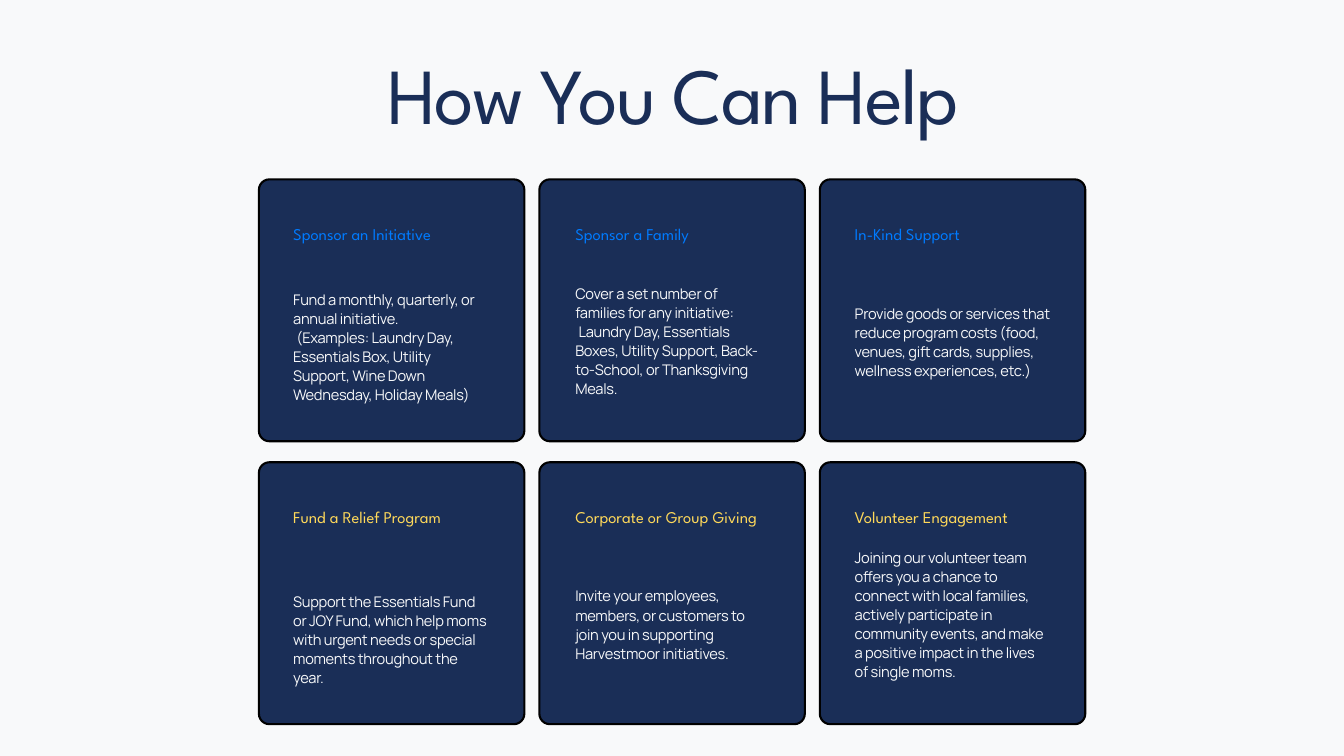
import pptx
import pptx.util
import pptx.dml.color
import pptx.enum.shapes
import pptx.enum.text

Pt = pptx.util.Pt
NAVY, PALE, BLUE, GOLD = "1A2E57", "F8F9FA", "007BFF", "FFD95A"
LEFT = pptx.enum.text.PP_ALIGN.LEFT
CENTER = pptx.enum.text.PP_ALIGN.CENTER

TITLE = {"font": {"name": "League Spartan", "size": Pt(85)},
         "para": {"line_spacing": Pt(85), "alignment": CENTER}, "gap": -170}
HEAD = {"font": {"name": "League Spartan", "size": Pt(17.6)},
        "para": {"line_spacing": Pt(22.9), "alignment": LEFT}, "gap": 0}
BODY = {"font": {"name": "Manrope", "size": Pt(15.7)},
        "para": {"line_spacing": Pt(20.4), "alignment": LEFT}, "gap": -30}

INSETS = [36.7, 38.5, 37.4]
ROWS = [
    (BLUE, [
        ("Sponsor an Initiative", 118.1,
         ["Fund a monthly, quarterly, or annual initiative.",
          "(Examples: Laundry Day, Essentials Box, Utility Support, "
          "Wine Down Wednesday, Holiday Meals)"]),
        ("Sponsor a Family", 111.6,
         ["Cover a set number of families for any initiative:",
          "Laundry Day, Essentials Boxes, Utility Support, "
          "Back-to-School, or Thanksgiving Meals."]),
        ("In-Kind Support", 132.5,
         ["Provide goods or services that reduce program costs (food, "
          "venues, gift cards, supplies, wellness experiences, etc.)"]),
    ]),
    (GOLD, [
        ("Fund a Relief Program", 138.2,
         ["Support the Essentials Fund or JOY Fund, which help moms with "
          "urgent needs or special moments throughout the year."]),
        ("Corporate or Group Giving", 132.5,
         ["Invite your employees, members, or customers to join you in "
          "supporting Harvestmoor initiatives."]),
        ("Volunteer Engagement", 91.4,
         ["Joining our volunteer team offers you a chance to connect with "
          "local families, actively participate in community events, and "
          "make a positive impact in the lives of single moms."]),
    ]),
]


def color(code):
    """Turn a hex string into a colour."""
    return pptx.dml.color.RGBColor.from_string(code)


def apply(item, values):
    """Set each attribute of an item from a dict."""
    for key, value in values.items():
        setattr(item, key, value)


def write(slide, box, lines, style, code):
    """Place a text box whose later paragraphs start slightly indented."""
    frame = slide.shapes.add_textbox(*map(Pt, box)).text_frame
    apply(frame, {"word_wrap": True, "margin_left": 0, "margin_right": 0,
                  "margin_top": 0, "margin_bottom": 0})
    for index, line in enumerate(lines):
        para = frame.add_paragraph() if index else frame.paragraphs[0]
        apply(para, style["para"])
        if index:
            para._p.get_or_add_pPr().set("indent", str(Pt(3.5)))
        run = para.add_run()
        run.text = line
        apply(run.font, style["font"])
        run.font.color.rgb = color(code)
        if style["gap"]:
            run._r.get_or_add_rPr().set("spc", str(style["gap"]))


def card(slide, box, inset, tint, content):
    """Draw one rounded card with its heading and body."""
    left, top, width, height = box
    head, drop, lines = content
    kind = pptx.enum.shapes.MSO_SHAPE.ROUNDED_RECTANGLE
    shape = slide.shapes.add_shape(kind, *map(Pt, box))
    shape.adjustments[0] = 0.04
    shape.shadow.inherit = False
    shape.fill.solid()
    shape.fill.fore_color.rgb = color(NAVY)
    shape.line.color.rgb = color("000000")
    shape.line.width = Pt(2.25)
    wide = 209.5 if inset != INSETS[1] else 207.4
    write(slide, (left + inset, top + 46.1, wide, 22), [head], HEAD, tint)
    write(slide, (left + inset, top + drop, wide, 20.4 * 5), lines, BODY, PALE)


def grid(slide, box):
    """Lay out the cards in two rows of three."""
    left, top, width, height = box
    wide, high = 284.4, 280.6
    across, down = (width - wide) / 2, height - high
    for row, (tint, cards) in enumerate(ROWS):
        for col, content in enumerate(cards):
            spot = (left + col * across, top + row * down, wide, high)
            card(slide, spot, INSETS[col], tint, content)


def main():
    """Build the slide and save it."""
    deck = pptx.Presentation()
    apply(deck, {"slide_width": Pt(1440), "slide_height": Pt(810)})
    slide = deck.slides.add_slide(deck.slide_layouts[6])
    slide.background.fill.solid()
    slide.background.fill.fore_color.rgb = color(PALE)
    write(slide, (167.8, 65.5, 1106.6, 89.3), ["How You Can Help"], TITLE, NAVY)
    grid(slide, (277.4, 192.2, 885.4, 583.7))
    deck.save("out.pptx")


if __name__ == "__main__":
    main()
